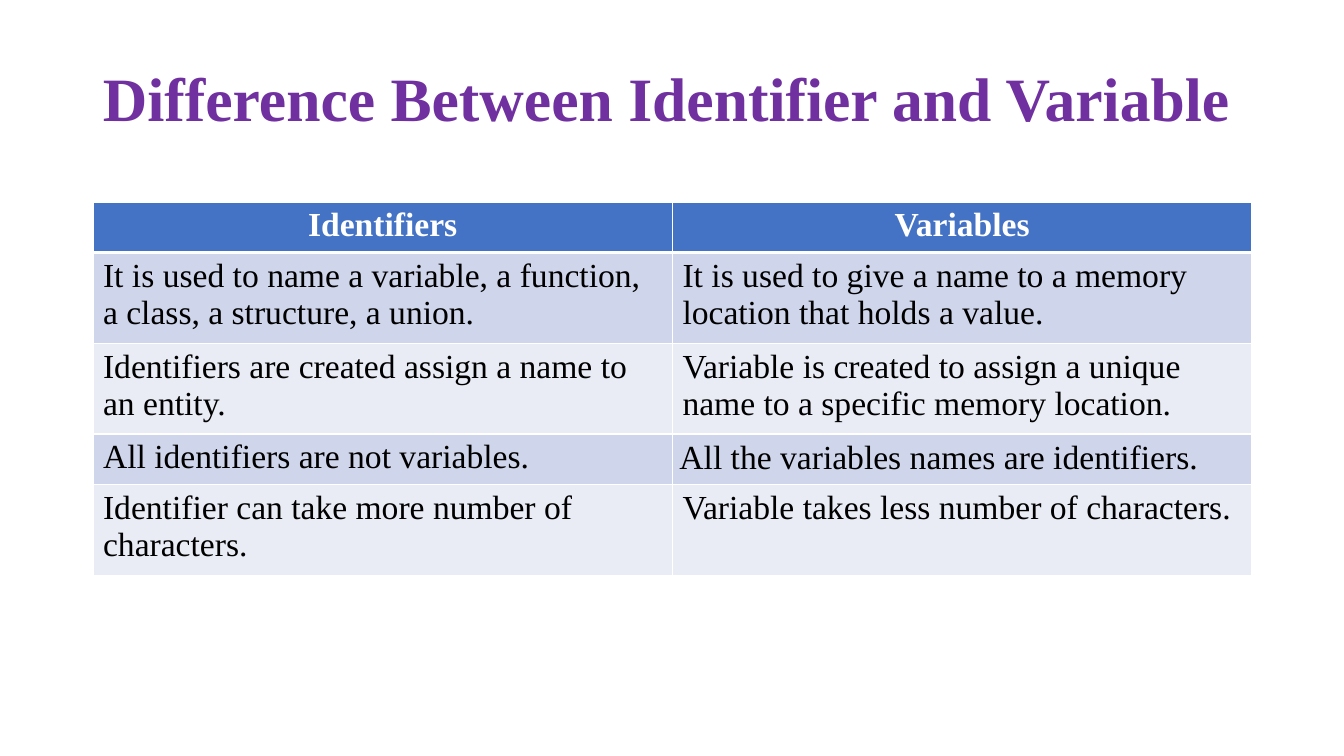
import pptx
import pptx.util
import pptx.dml.color
import pptx.enum.text
import pptx.oxml

COLORS = {"title": "7030A0", "header": "4472C4", "band": "CFD5EA",
          "plain": "E9EBF5", "text": "000000", "white": "FFFFFF"}
ROWS = [
    ("Identifiers", "Variables"),
    ("It is used to name a variable, a function, a class, a structure, a union.",
     "It is used to give a name to a memory location that holds a value."),
    ("Identifiers are created assign a name to an entity.",
     "Variable is created to assign a unique name to a specific memory location."),
    ("All identifiers are not variables.", "All the variables names are identifiers."),
    ("Identifier can take more number of characters.",
     "Variable takes less number of characters."),
]
HEIGHTS = [46, 84, 84, 47, 84]
ALIGN = pptx.enum.text.PP_ALIGN
ANCHOR = pptx.enum.text.MSO_ANCHOR


def px(n):
    return pptx.util.Emu(round(n * 914400 / 100.8))


def rgb(name):
    return pptx.dml.color.RGBColor.from_string(COLORS[name])


def apply(obj, values):
    for name, value in values.items():
        setattr(obj, name, value)


class SlideBuilder:
    """Hold the font and current slide, and draw its elements."""

    font = "Times New Roman"

    def __init__(self, prs):
        self.s = prs.slides.add_slide(prs.slide_layouts[6])

    def add_text(self, tf, text, color, font, para):
        p = tf.paragraphs[0]
        apply(p, para)
        r = p.add_run()
        r.text = text
        apply(r.font, {"name": self.font, **font})
        r.font.color.rgb = rgb(color)

    def title(self, text, x, y, w, h):
        tf = self.s.shapes.add_textbox(px(x), px(y), px(w), px(h)).text_frame
        apply(tf, {"word_wrap": True, "vertical_anchor": ANCHOR.MIDDLE})
        self.add_text(tf, text, "title", {"size": pptx.util.Pt(44), "bold": True},
                      {"alignment": ALIGN.LEFT, "line_spacing": 0.9})

    def borders(self, cell, widths):
        tcPr = cell._tc.get_or_add_tcPr()
        for i, (side, width) in enumerate(widths.items()):
            tcPr.insert(i, pptx.oxml.parse_xml(
                f'<a:ln{side} xmlns:a="http://schemas.openxmlformats.org/drawingml/2006/main" '
                f'w="{pptx.util.Pt(width)}"><a:solidFill><a:srgbClr val="{COLORS["white"]}"/>'
                f'</a:solidFill></a:ln{side}>'))

    def table(self, rows, heights, x, y, w):
        table = self.s.shapes.add_table(len(rows), len(rows[0]), px(x), px(y),
                                        px(w), px(sum(heights))).table
        for i, (texts, height) in enumerate(zip(rows, heights)):
            table.rows[i].height = px(height)
            header = i == 0
            fill = "header" if header else "band" if i % 2 else "plain"
            for j, text in enumerate(texts):
                cell = table.cell(i, j)
                cell.fill.solid()
                cell.fill.fore_color.rgb = rgb(fill)
                self.borders(cell, {"L": 1, "R": 1, "T": 3 if i == 1 else 1,
                                    "B": 3 if header else 1})
                para = {"alignment": ALIGN.CENTER if header else ALIGN.LEFT}
                if (i, j) == (3, 1):
                    para["line_spacing"] = 1.15
                    apply(cell, {"margin_left": px(7), "margin_right": px(7),
                                 "margin_top": 0, "margin_bottom": 0})
                self.add_text(cell.text_frame, text, "white" if header else "text",
                              {"size": pptx.util.Pt(24), "bold": header}, para)


def main():
    prs = pptx.Presentation()
    apply(prs, {"slide_width": px(1344), "slide_height": px(756)})
    slide = SlideBuilder(prs)
    slide.title("Difference Between Identifier and Variable", 93, 40, 1159, 124)
    slide.table(ROWS, HEIGHTS, 93, 202, 1159)
    prs.save("out.pptx")


if __name__ == "__main__":
    main()
